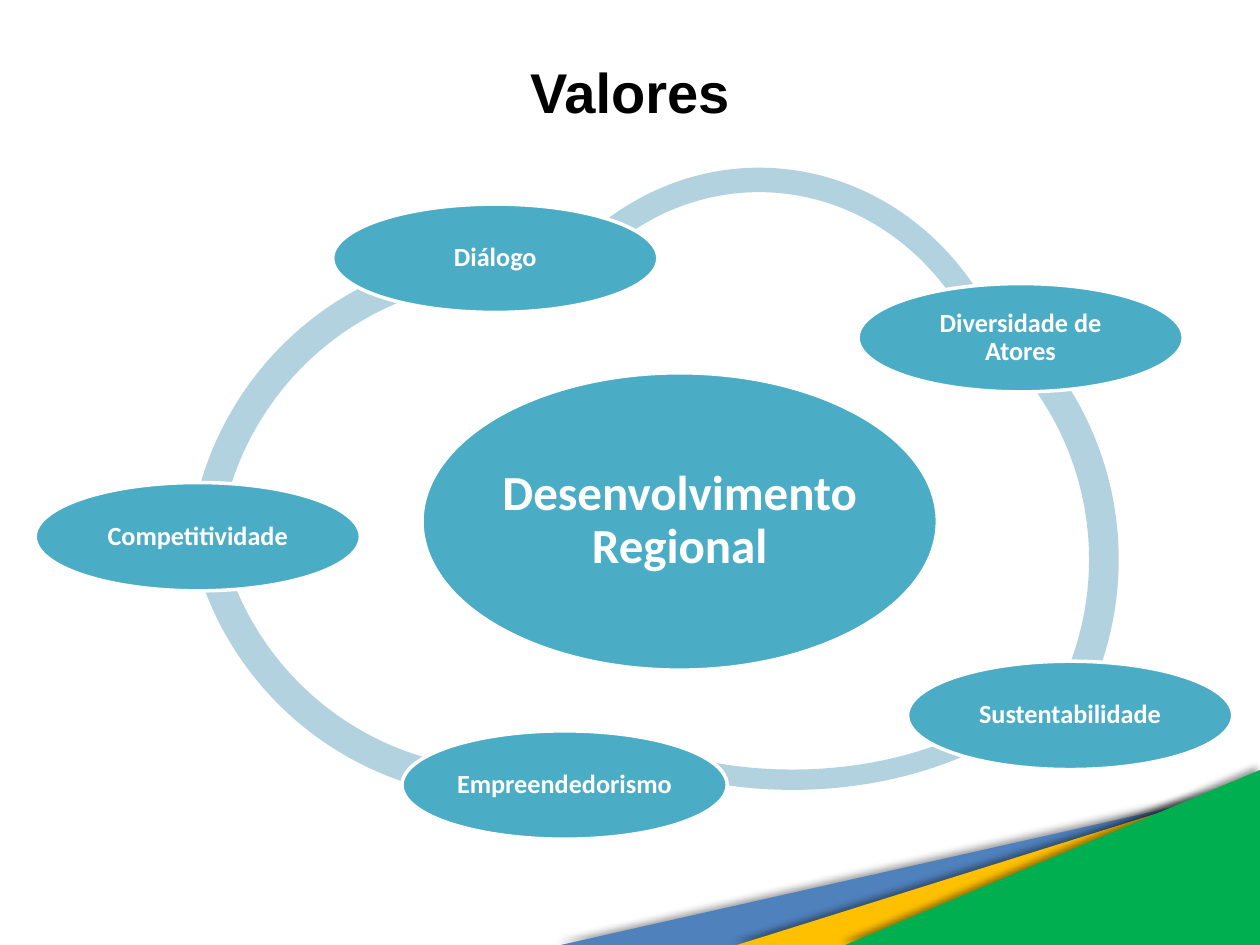
from dataclasses import dataclass

from lxml import etree
from pptx import Presentation
from pptx.dml.color import RGBColor
from pptx.enum.shapes import MSO_SHAPE
from pptx.enum.text import MSO_ANCHOR, PP_ALIGN
from pptx.oxml.ns import qn
from pptx.util import Pt

ARC = MSO_SHAPE.BLOCK_ARC
OVAL = MSO_SHAPE.OVAL
WEDGE = MSO_SHAPE.RIGHT_TRIANGLE
MIDDLE = MSO_ANCHOR.MIDDLE
CENTER = PP_ALIGN.CENTER

WIDE, HIGH = 720, 540


@dataclass(frozen=True)
class Theme:
    blue: str = "4F81BD"
    gold: str = "FFC000"
    green: str = "00B050"
    ring: str = "B2D2DF"
    node: str = "4BACC6"
    white: str = "FFFFFF"
    black: str = "000000"
    head: str = "Arial"
    body: str = "Calibri"
    title: float = 32
    core: float = 28
    label: float = 15


@dataclass(frozen=True)
class Wedge:
    """A triangle set in the bottom right corner."""
    width: float
    height: float
    color: str


@dataclass(frozen=True)
class Arc:
    """A piece of ring, clockwise from start to end in degrees."""
    left: float
    top: float
    width: float
    height: float
    start: float
    end: float


@dataclass(frozen=True)
class Node:
    text: str
    x: float
    y: float
    width: float = 185.8
    height: float = 61.9
    size: float = 15
    inset: float = 1.5


THEME = Theme()

WEDGES = [
    Wedge(399.6, 90, THEME.blue),
    Wedge(298.8, 93.6, THEME.gold),
    Wedge(236.9, 100, THEME.green),
]

SPAN = 368.6
ARCS = [
    Arc(107.3, 143.3, SPAN, SPAN, 186.68, 267.27),
    Arc(105.1, 87.8, SPAN, SPAN, 79.32, 168.77),
    Arc(268.6, 198, SPAN, 253.4, 27.97, 136.41),
    Arc(270.7, 135.4, SPAN, SPAN, 315.35, 29.66),
    Arc(281.5, 95.8, 304.6, 329.8, 220.94, 336.23),
]

NODES = [
    Node("Desenvolvimento Regional", 388.4, 298, 294.5, 169.9, THEME.core, 2.8),
    Node("Diálogo", 283, 147.6, size=THEME.label),
    Node("Diversidade de Atores", 583.2, 193, size=THEME.label),
    Node("Sustentabilidade", 611.5, 408.8, size=THEME.label),
    Node("Empreendedorismo", 322.6, 448.6, size=THEME.label),
    Node("Competitividade", 113, 306.7, size=THEME.label),
]


def add_shape(slide, kind, left: float, top: float, width: float,
              height: float, color: str):
    shape = slide.shapes.add_shape(kind, Pt(left), Pt(top), Pt(width), Pt(height))
    shape.shadow.inherit = False
    shape.fill.solid()
    shape.fill.fore_color.rgb = RGBColor.from_string(color)
    shape.line.fill.background()
    return shape


def set_text(shape, text: str, font: str, size: float, color: str,
             inset: float, space: float = 1.0) -> None:
    frame = shape.text_frame
    frame.text = text
    frame.word_wrap = True
    frame.vertical_anchor = MIDDLE
    frame.margin_left = frame.margin_right = Pt(inset)
    frame.margin_top = frame.margin_bottom = Pt(inset)
    para = frame.paragraphs[0]
    para.alignment = CENTER
    para.line_spacing = space
    run = para.runs[0].font
    run.name = font
    run.size = Pt(size)
    run.bold = True
    run.color.rgb = RGBColor.from_string(color)


def cast_shadow(shape) -> None:
    """Give the shape a soft shadow towards the upper left."""
    effects = shape._element.spPr.find(qn("a:effectLst"))
    outer = etree.SubElement(
        effects, qn("a:outerShdw"), blurRad=str(Pt(4)), dist=str(Pt(3)),
        dir=str(225 * 60000), algn="br", rotWithShape="0")
    tint = etree.SubElement(outer, qn("a:srgbClr"), val=THEME.black)
    etree.SubElement(tint, qn("a:alpha"), val="40000")


def draw_wedge(slide, wedge: Wedge) -> None:
    shape = add_shape(slide, WEDGE, WIDE - wedge.width, HIGH - wedge.height,
                      wedge.width, wedge.height, wedge.color)
    shape._element.spPr.find(qn("a:xfrm")).set("flipH", "1")
    cast_shadow(shape)


def draw_arc(slide, arc: Arc) -> None:
    shape = add_shape(slide, ARC, arc.left, arc.top, arc.width, arc.height,
                      THEME.ring)
    # Angles are stored in 1/60000 degree, adjustments in 1/100000.
    shape.adjustments[0] = arc.start * 0.6
    shape.adjustments[1] = arc.end * 0.6
    shape.adjustments[2] = 0.046


def draw_node(slide, node: Node) -> None:
    shape = add_shape(slide, OVAL, node.x - node.width / 2,
                      node.y - node.height / 2, node.width, node.height,
                      THEME.node)
    shape.line.color.rgb = RGBColor.from_string(THEME.white)
    shape.line.width = Pt(2)
    set_text(shape, node.text, THEME.body, node.size, THEME.white,
             node.inset, 0.9)


def draw_title(slide, text: str) -> None:
    box = slide.shapes.add_textbox(Pt(36), Pt(21.6), Pt(648), Pt(61.2))
    set_text(box, text, THEME.head, THEME.title, THEME.black, 3.6)


def main() -> None:
    deck = Presentation()
    deck.slide_width, deck.slide_height = Pt(WIDE), Pt(HIGH)
    slide = deck.slides.add_slide(deck.slide_layouts[6])
    for wedge in WEDGES:
        draw_wedge(slide, wedge)
    draw_title(slide, "Valores")
    for arc in ARCS:
        draw_arc(slide, arc)
    for node in NODES:
        draw_node(slide, node)
    deck.save("out.pptx")


if __name__ == "__main__":
    main()
